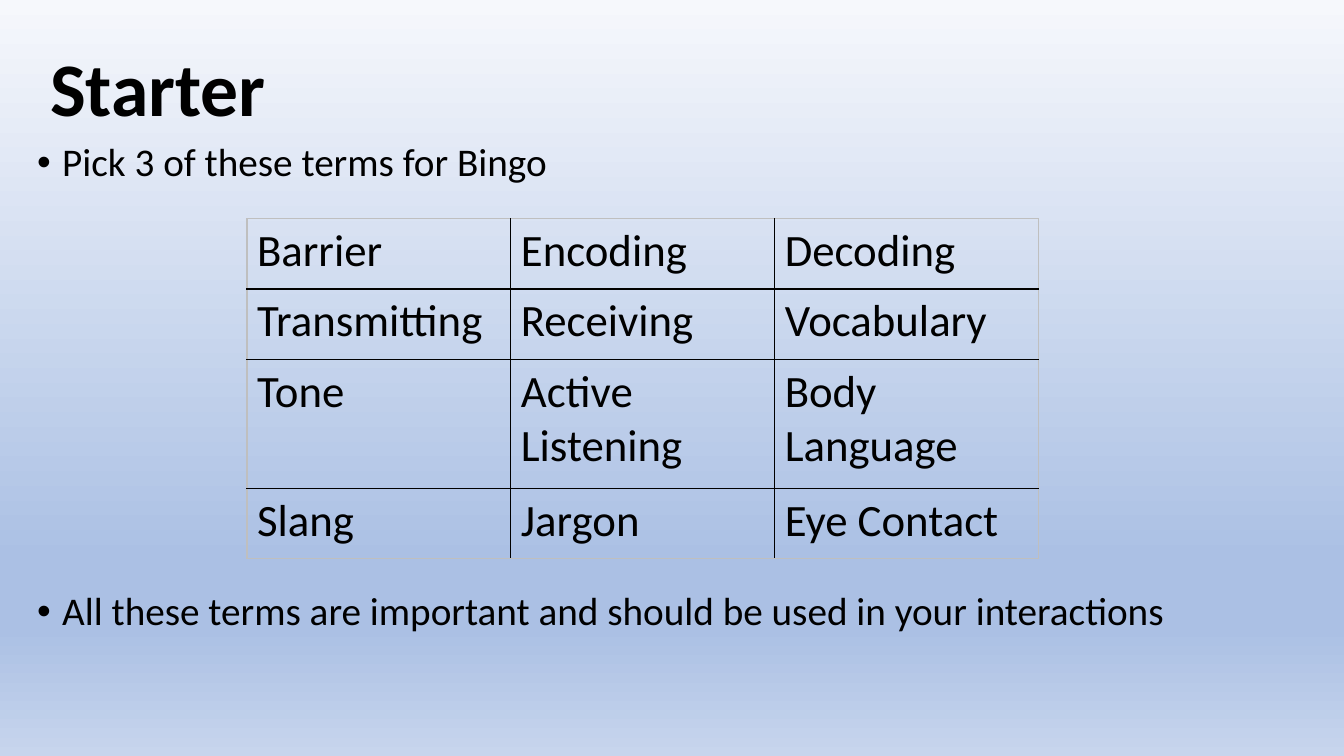
from copy import deepcopy

from lxml.etree import SubElement
from pptx import Presentation
from pptx.dml.color import RGBColor
from pptx.enum.text import MSO_ANCHOR as Anchor
from pptx.oxml.ns import qn
from pptx.util import Pt

BLACK = RGBColor(0x00, 0x00, 0x00)
SILVER = RGBColor(0xBF, 0xBF, 0xBF)
MIST = RGBColor(0xF6, 0xF8, 0xFC)
BLUE = RGBColor(0xAB, 0xC0, 0xE4)
PALE_BLUE = RGBColor(0xC7, 0xD5, 0xED)

BACKDROP = [(0, MIST), (0.74, BLUE), (0.83, BLUE), (1, PALE_BLUE)]
TERMS = [
    ["Barrier", "Encoding", "Decoding"],
    ["Transmitting", "Receiving", "Vocabulary"],
    ["Tone", "Active Listening", "Body Language"],
    ["Slang", "Jargon", "Eye Contact"],
]
ROW_HEIGHTS = [50.2, 50.2, 92.2, 50.2]


class SlideBuilder:
    font = "Calibri"
    color = BLACK

    def __init__(self, slide):
        self.slide = slide

    def backdrop(self, stops):
        fill = self.slide.background.fill
        fill.gradient()
        fill.gradient_angle = 270
        stop_list = self.slide.element.find(".//" + qn("a:gsLst"))
        while len(stop_list) < len(stops):
            stop_list.append(deepcopy(stop_list[0]))
        for stop, (position, color) in zip(fill.gradient_stops, stops):
            stop.position = position
            stop.color.rgb = color

    def format_para(self, para, size, bold=False):
        for span in para.runs:
            span.font.name = self.font
            span.font.size = Pt(size)
            span.font.bold = bold
            span.font.color.rgb = self.color

    def text_box(self, left, top, width, height, anchor):
        box = self.slide.shapes.add_textbox(Pt(left), Pt(top), Pt(width), Pt(height))
        box.text_frame.word_wrap = True
        box.text_frame.vertical_anchor = anchor
        return box.text_frame

    def title(self, text, left, top, width, height):
        frame = self.text_box(left, top, width, height, Anchor.MIDDLE)
        frame.text = text
        para = frame.paragraphs[0]
        para.line_spacing = 0.9
        self.format_para(para, 54, bold=True)

    def bullets(self, items, left, top, width, height):
        frame = self.text_box(left, top, width, height, Anchor.TOP)
        frame.text = "\n".join(text for text, gap in items)
        for para, (text, gap) in zip(frame.paragraphs, items):
            para.line_spacing = 0.9
            para.space_before = Pt(gap)
            self.format_para(para, 28)
            props = para._p.get_or_add_pPr()
            props.set("marL", str(Pt(18)))
            props.set("indent", str(Pt(-18)))
            SubElement(props, qn("a:buFont"), typeface="Arial")
            SubElement(props, qn("a:buChar"), char="•")

    def border(self, cell, side, color):
        props = cell._tc.get_or_add_tcPr()
        line = SubElement(props, qn(f"a:{side}"), w=str(Pt(1)))
        fill = SubElement(line, qn("a:solidFill"))
        SubElement(fill, qn("a:srgbClr"), val=str(color))

    def table(self, rows, left, top, column_width, row_heights):
        last_row, last_column = len(rows) - 1, len(rows[0]) - 1
        table = self.slide.shapes.add_table(
            len(rows), len(rows[0]), Pt(left), Pt(top),
            Pt(column_width * len(rows[0])), Pt(sum(row_heights))).table
        table.first_row = table.horz_banding = False
        for column in table.columns:
            column.width = Pt(column_width)
        for r, (row, height) in enumerate(zip(rows, row_heights)):
            table.rows[r].height = Pt(height)
            for c, text in enumerate(row):
                cell = table.cell(r, c)
                cell.text = text
                self.format_para(cell.text_frame.paragraphs[0], 32)
                outer_sides = {"lnL": c == 0, "lnR": c == last_column,
                               "lnT": r == 0, "lnB": r == last_row}
                for side, outer in outer_sides.items():
                    self.border(cell, side, SILVER if outer else BLACK)
                cell.fill.background()


def main():
    deck = Presentation()
    deck.slide_width, deck.slide_height = Pt(960), Pt(540)
    page = SlideBuilder(deck.slides.add_slide(deck.slide_layouts[6]))
    page.backdrop(BACKDROP)
    page.title("Starter", 28.8, 13.7, 828, 104.4)
    page.bullets([
        ("Pick 3 of these terms for Bingo", 10),
        ("All these terms are important and should be used in your interactions", 290.5),
    ], 19.4, 98.6, 912.2, 414)
    page.table(TERMS, 176.4, 156.3, 188.5, ROW_HEIGHTS)
    deck.save("out.pptx")


if __name__ == "__main__":
    main()
